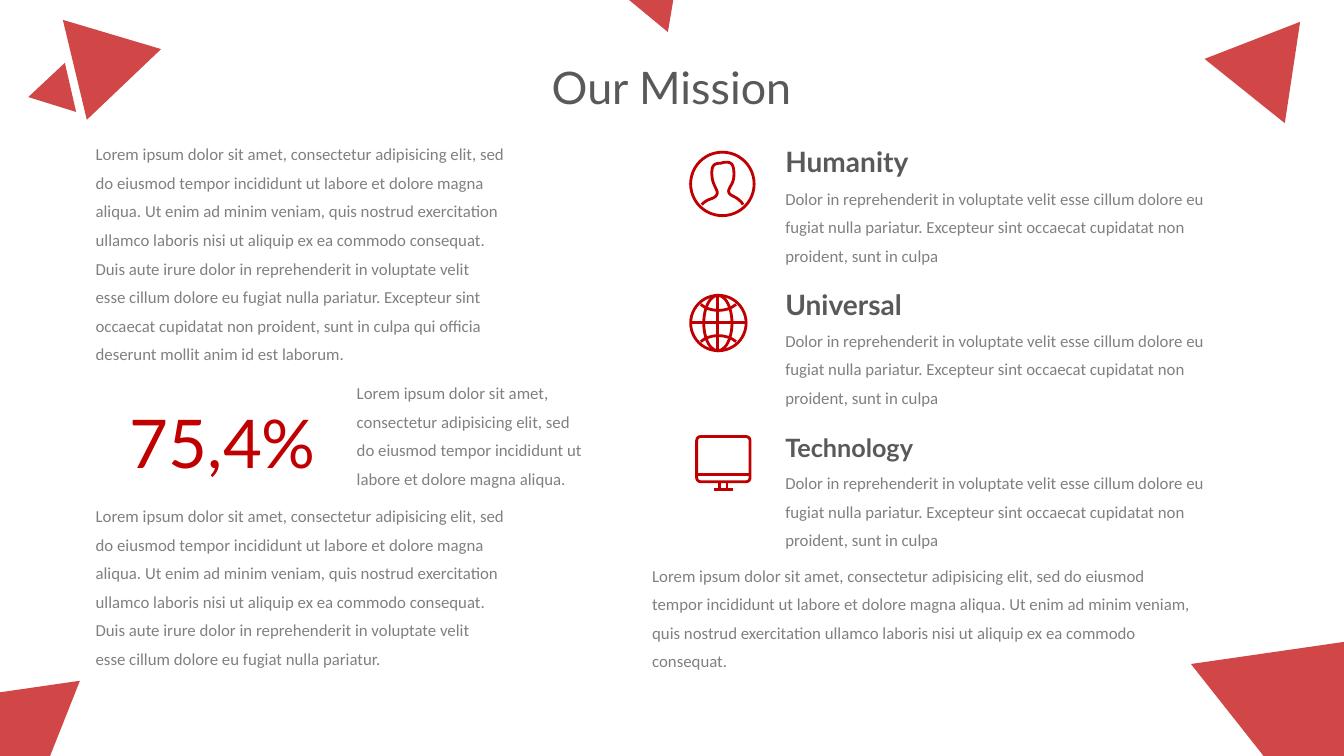
from dataclasses import dataclass

from lxml import etree
from pptx import Presentation
from pptx import util as u
from pptx.dml.color import RGBColor
from pptx.enum import shapes, text
from pptx.oxml.ns import qn

PX = 9144  # one px is a hundredth of an inch


@dataclass(frozen=True)
class Theme:
    red: RGBColor = RGBColor(0xC0, 0x00, 0x00)
    heading: RGBColor = RGBColor(0x59, 0x59, 0x59)
    body: RGBColor = RGBColor(0x80, 0x80, 0x80)
    heading_font: str = "Lato"
    body_font: str = "Calibri"
    body_size: int = 12
    title_size: int = 32
    figure_size: int = 48
    stroke: float = 2
    triangle_alpha: int = 72


@dataclass(frozen=True)
class Frame:
    left: int
    top: int
    width: int
    height: int

    def emu(self) -> tuple[int, ...]:
        return tuple(n * PX for n in (self.left, self.top, self.width, self.height))


@dataclass(frozen=True)
class Triangle:
    frame: Frame
    rotation: float


@dataclass(frozen=True)
class Body:
    frame: Frame
    lines: tuple[str, ...]


@dataclass(frozen=True)
class Heading:
    frame: Frame
    words: str
    size: int
    color: RGBColor
    bold: bool = False
    centred: bool = False


Point = tuple[int, int]
THEME = Theme()

# Wording
OPENING = (
    "Lorem ipsum dolor sit amet, consectetur adipisicing elit, sed",
    "do eiusmod tempor incididunt ut labore et dolore magna",
    "aliqua. Ut enim ad minim veniam, quis nostrud exercitation",
    "ullamco laboris nisi ut aliquip ex ea commodo consequat.",
    "Duis aute irure dolor in reprehenderit in voluptate velit",
)
FEATURE_LINES = (
    "Dolor in reprehenderit in voluptate velit esse cillum dolore eu",
    "fugiat nulla pariatur. Excepteur sint occaecat cupidatat non",
    "proident, sunt in culpa",
)
BODIES = (
    Body(Frame(85, 138, 455, 231), OPENING + (
        "esse cillum dolore eu fugiat nulla pariatur. Excepteur sint",
        "occaecat cupidatat non proident, sunt in culpa qui officia",
        "deserunt mollit anim id est laborum.")),
    Body(Frame(344, 375, 284, 116), (
        "Lorem ipsum dolor sit amet,",
        "consectetur adipisicing elit, sed",
        "do eiusmod tempor incididunt ut",
        "labore et dolore magna aliqua.")),
    Body(Frame(85, 497, 498, 173), OPENING + (
        "esse cillum dolore eu fugiat nulla pariatur.",)),
    *(Body(Frame(769, top, 498, 88), FEATURE_LINES) for top in (182, 323, 464)),
    Body(Frame(637, 556, 612, 116), (
        "Lorem ipsum dolor sit amet, consectetur adipisicing elit, sed do eiusmod",
        "tempor incididunt ut labore et dolore magna aliqua. Ut enim ad minim veniam,",
        "quis nostrud exercitation ullamco laboris nisi ut aliquip ex ea commodo",
        "consequat.")),
)
HEADINGS = (
    Heading(Frame(532, 54, 268, 64), "Our Mission", THEME.title_size, THEME.heading, centred=True),
    Heading(Frame(117, 393, 208, 91), "75,4%", THEME.figure_size, THEME.red, centred=True),
    Heading(Frame(769, 138, 145, 44), "Humanity", 20, THEME.heading, bold=True),
    Heading(Frame(769, 280, 139, 44), "Universal", 20, THEME.heading, bold=True),
    Heading(Frame(769, 424, 149, 40), "Technology", 18, THEME.heading, bold=True),
)

TRIANGLES = (
    Triangle(Frame(-117, 637, 234, 202), 51.7),
    Triangle(Frame(1216, 587, 234, 202), 51.7),
    Triangle(Frame(1211, 12, 102, 88), 38.7),
    Triangle(Frame(66, 15, 102, 88), 76.5),
    Triangle(Frame(600, -42, 74, 64), 279.6),
    Triangle(Frame(24, 70, 50, 43), 257.1),
)

# Icon outlines: a start point, then two controls and an end for each cubic
PERSON = ((696, 203), (700, 199), (703, 198), (706, 197), (711, 195), (713, 192), (710, 187),
          (709, 184), (706, 181), (706, 171), (706, 162), (711, 162), (715, 162),
          (717, 161), (719, 161), (721, 161), (724, 161), (728, 162), (728, 172),
          (728, 180), (726, 182), (724, 186), (722, 189), (722, 192), (726, 194),
          (730, 196), (734, 198), (737, 203))
PARALLELS = (((695, 302), (704, 310), (721, 310), (730, 302)),
             ((695, 339), (704, 331), (721, 331), (730, 339)))
OVALS = (Frame(685, 151, 63, 63), Frame(685, 293, 55, 55), Frame(698, 293, 28, 55))
STROKES = (((712, 293), (712, 348)), ((685, 320), (740, 320)),  # globe axes
           ((691, 471), (744, 471)),  # screen edge
           ((714, 478), (714, 486)), ((721, 478), (721, 486)), ((708, 486), (727, 486)))
SCREEN = Frame(691, 433, 53, 45)


def add_triangle(page, triangle: Triangle) -> None:
    shape = page.shapes.add_shape(shapes.MSO_SHAPE.ISOSCELES_TRIANGLE, *triangle.frame.emu())
    shape.rotation = triangle.rotation
    shape.shadow.inherit = False
    shape.line.fill.background()
    shape.fill.solid()
    shape.fill.fore_color.rgb = THEME.red
    color = shape._element.spPr.find(qn("a:solidFill"))[0]
    etree.SubElement(color, qn("a:alpha"), val=str(THEME.triangle_alpha * 1000))


def add_body(page, body: Body) -> None:
    box = page.shapes.add_textbox(*body.frame.emu())
    frame = box.text_frame
    frame.word_wrap = True
    frame.auto_size = text.MSO_AUTO_SIZE.SHAPE_TO_FIT_TEXT
    frame.text = "\n".join(body.lines)
    for para in frame.paragraphs:
        para.alignment = text.PP_ALIGN.JUSTIFY
        para.space_after = u.Pt(6)
        para.font.name = THEME.body_font
        para.font.size = u.Pt(THEME.body_size)
        para.font.color.rgb = THEME.body


def add_heading(page, heading: Heading) -> None:
    box = page.shapes.add_textbox(*heading.frame.emu())
    box.text_frame.word_wrap = False
    box.text_frame.auto_size = text.MSO_AUTO_SIZE.SHAPE_TO_FIT_TEXT
    para = box.text_frame.paragraphs[0]
    para.text = heading.words
    para.alignment = text.PP_ALIGN.CENTER if heading.centred else text.PP_ALIGN.LEFT
    para.font.name = THEME.heading_font
    para.font.size = u.Pt(heading.size)
    para.font.bold = heading.bold
    para.font.color.rgb = heading.color


def style_line(line) -> None:
    line.color.rgb = THEME.red
    line.width = u.Pt(THEME.stroke)


def add_outline(page, kind: shapes.MSO_SHAPE, frame: Frame):
    shape = page.shapes.add_shape(kind, *frame.emu())
    shape.shadow.inherit = False
    shape.fill.background()
    style_line(shape.line)
    return shape


def add_stroke(page, start: Point, end: Point) -> None:
    ends = (n * PX for n in start + end)
    line = page.shapes.add_connector(shapes.MSO_CONNECTOR.STRAIGHT, *ends)
    etree.SubElement(line._element.spPr, qn("a:effectLst"))
    style_line(line.line)


def add_curve(page, points: tuple[Point, ...], steps: int = 8) -> None:
    path = [(x * PX, y * PX) for x, y in points]
    samples = []
    for first in range(0, len(path) - 1, 3):
        for step in range(1, steps + 1):
            t = step / steps
            weights = ((1 - t) ** 3, 3 * t * (1 - t) ** 2, 3 * t * t * (1 - t), t ** 3)
            samples.append(tuple(sum(w * point[axis] for w, point in zip(weights, path[first:first + 4]))
                                 for axis in (0, 1)))
    builder = page.shapes.build_freeform(*path[0])
    builder.add_line_segments(samples, close=False)
    curve = builder.convert_to_shape()
    curve.shadow.inherit = False
    curve.fill.background()
    style_line(curve.line)


def main() -> None:
    deck = Presentation()
    deck.slide_width, deck.slide_height = 1333 * PX, 750 * PX
    page = deck.slides.add_slide(deck.slide_layouts[6])

    # Corner decoration
    for triangle in TRIANGLES:
        add_triangle(page, triangle)
    # Text
    for body in BODIES:
        add_body(page, body)
    for heading in HEADINGS:
        add_heading(page, heading)
    # Icons
    for oval in OVALS:
        add_outline(page, shapes.MSO_SHAPE.OVAL, oval)
    add_outline(page, shapes.MSO_SHAPE.ROUNDED_RECTANGLE, SCREEN).adjustments[0] = 0.09
    for curve in (PERSON, *PARALLELS):
        add_curve(page, curve)
    for start, end in STROKES:
        add_stroke(page, start, end)

    deck.save("out.pptx")


if __name__ == "__main__":
    main()
